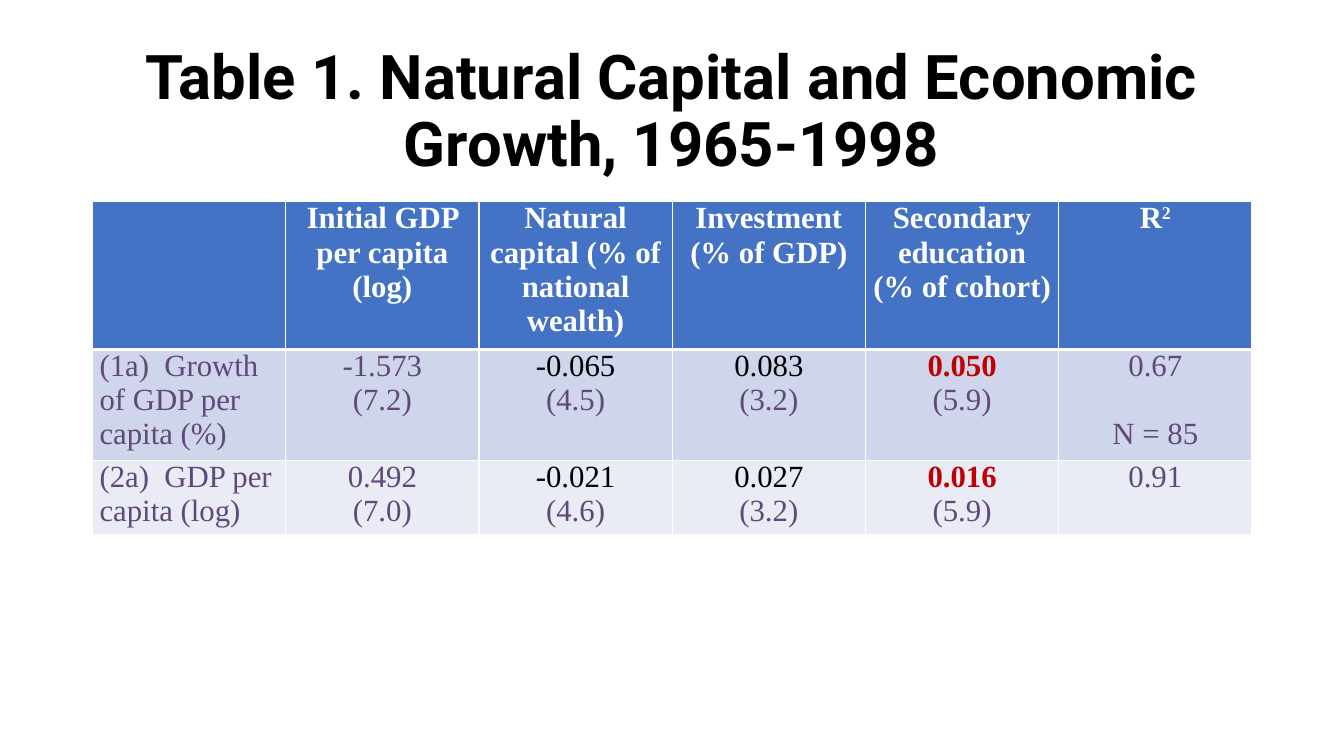
"""Build a slide with a regression table on natural capital and economic growth."""
import lxml.etree
import pptx
import pptx.dml.color
import pptx.enum.text
import pptx.oxml.ns
import pptx.util

Cm = pptx.util.Cm
Pt = pptx.util.Pt
CENTER = pptx.enum.text.PP_ALIGN.CENTER
LEFT = pptx.enum.text.PP_ALIGN.LEFT
COLORS = {
    "black": "000000",
    "white": "FFFFFF",
    "header": "4472C4",
    "band_dark": "CFD5EA",
    "band_light": "E9EBF5",
    "purple": "5F497A",
    "red": "C00000",
}
ROW_FILLS = ["header", "band_dark", "band_light"]
ROW_HEIGHTS = [3.42, 2.58, 1.72]
COLUMN_WIDTH = 4.87
ESTIMATE_COLORS = {2: "black", 3: "black", 4: "red"}
ROWS = [
    [[], ["Initial GDP per capita (log)"], ["Natural capital (% of national wealth)"],
     ["Investment (% of GDP)"], ["Secondary education", "(% of cohort)"], ["R"]],
    [["(1a)  Growth of GDP per capita (%)"], ["-1.573", "(7.2)"], ["-0.065", "(4.5)"],
     ["0.083", "(3.2)"], ["0.050", "(5.9)"], ["0.67", "N = 85"]],
    [["(2a)  GDP per capita (log)"], ["0.492", "(7.0)"], ["-0.021", "(4.6)"],
     ["0.027", "(3.2)"], ["0.016", "(5.9)"], ["0.91"]],
]


def add_run(paragraph, text, font_name, size, color, bold):
    run = paragraph.add_run()
    run.text = text
    run.font.name = font_name
    run.font.size = Pt(size)
    run.font.bold = bold
    run.font.color.rgb = pptx.dml.color.RGBColor.from_string(COLORS[color])
    return run


def add_border(cell, side, width):
    line = lxml.etree.SubElement(
        cell._tc.get_or_add_tcPr(), pptx.oxml.ns.qn(f"a:{side}"), w=str(Pt(width)))
    fill = lxml.etree.SubElement(line, pptx.oxml.ns.qn("a:solidFill"))
    lxml.etree.SubElement(fill, pptx.oxml.ns.qn("a:srgbClr"), val=COLORS["white"])


presentation = pptx.Presentation()
presentation.slide_width = Cm(33.87)
presentation.slide_height = Cm(19.05)
slide = presentation.slides.add_slide(presentation.slide_layouts[6])

title = slide.shapes.add_textbox(Cm(2.33), Cm(1.01), Cm(29.21), Cm(3.68))
title.text_frame.word_wrap = True
title.text_frame.vertical_anchor = pptx.enum.text.MSO_ANCHOR.MIDDLE
paragraph = title.text_frame.paragraphs[0]
paragraph.alignment = CENTER
paragraph.line_spacing = 0.9
add_run(paragraph, "Table 1. Natural Capital and Economic Growth, 1965-1998",
        "Roboto", 44, "black", True)

table = slide.shapes.add_table(
    len(ROWS), len(ROWS[0]), Cm(2.33), Cm(5.08),
    Cm(COLUMN_WIDTH * len(ROWS[0])), Cm(sum(ROW_HEIGHTS))).table
for column in table.columns:
    column.width = Cm(COLUMN_WIDTH)

for row_index, row in enumerate(ROWS):
    table.rows[row_index].height = Cm(ROW_HEIGHTS[row_index])
    is_header = row_index == 0
    for column_index, lines in enumerate(row):
        cell = table.cell(row_index, column_index)
        cell.margin_left = cell.margin_right = Cm(0.18)
        cell.margin_top = cell.margin_bottom = 0
        add_border(cell, "lnL", 1)
        add_border(cell, "lnR", 1)
        add_border(cell, "lnT", 3 if row_index == 1 else 1)
        add_border(cell, "lnB", 3 if is_header else 1)
        cell.fill.solid()
        cell.fill.fore_color.rgb = pptx.dml.color.RGBColor.from_string(
            COLORS[ROW_FILLS[row_index]])
        for line_index, text in enumerate(lines):
            frame = cell.text_frame
            paragraph = frame.add_paragraph() if line_index else frame.paragraphs[0]
            paragraph.alignment = CENTER if column_index else LEFT
            color = "white" if is_header else "purple"
            if not is_header and line_index == 0:
                color = ESTIMATE_COLORS.get(column_index, color)
            bold = is_header or color == "red"
            add_run(paragraph, text, "Times New Roman", 22, color, bold)
            if text == "R":
                exponent = add_run(paragraph, "2", "Times New Roman", 22, color, bold)
                exponent._r.get_or_add_rPr().set("baseline", "30000")
            if text == "N = 85":
                paragraph.space_before = Pt(24)

presentation.save("out.pptx")
